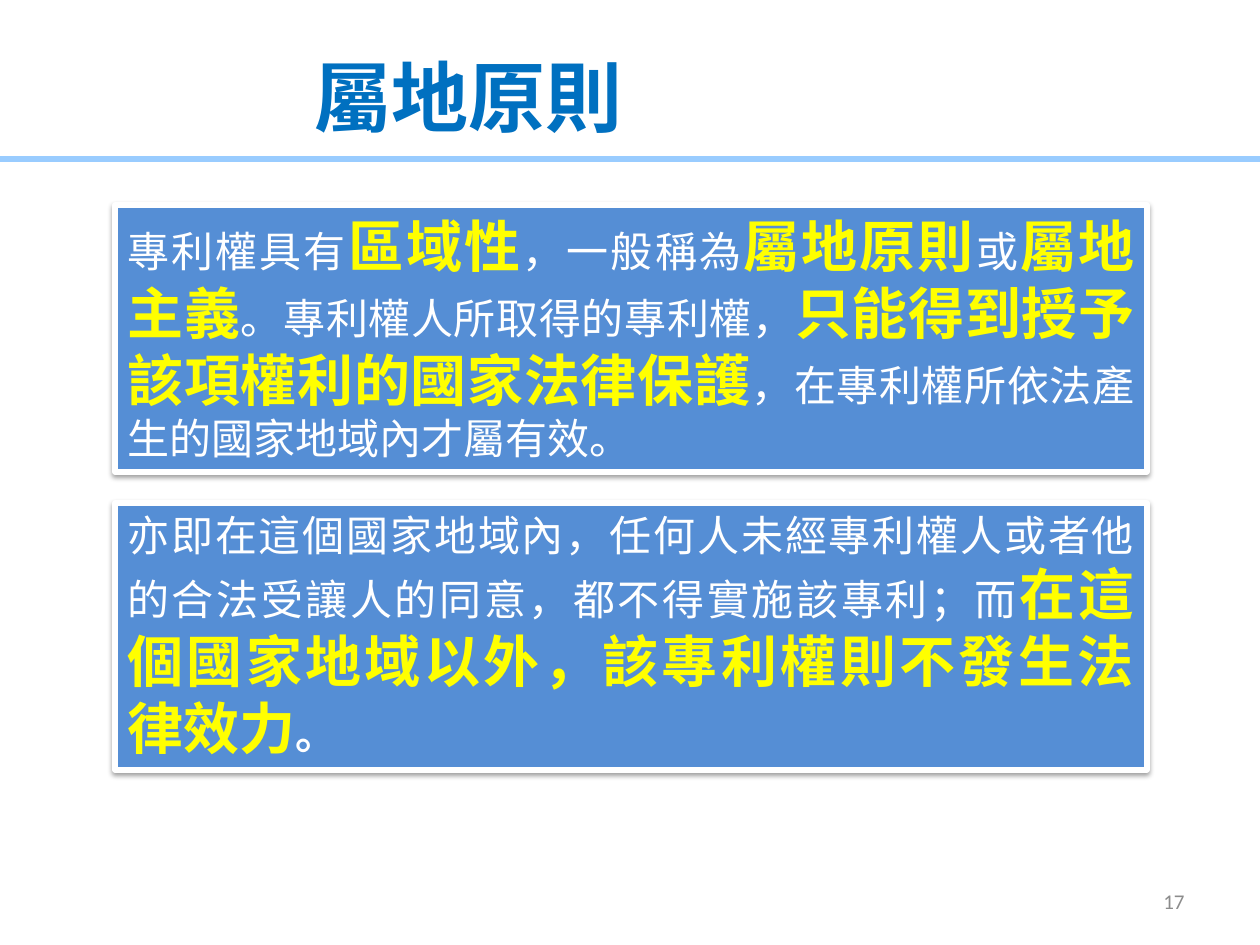
from lxml.etree import SubElement
from pptx import Presentation
from pptx.dml.color import RGBColor
from pptx.enum.shapes import MSO_SHAPE as Shape
from pptx.enum.text import MSO_ANCHOR as Anchor, PP_ALIGN as Align
from pptx.oxml.ns import qn
from pptx.util import Pt

EMU_PER_PX = 914400 / 126
COLORS = {
    "rule": "99CCFF",
    "title": "0070C0",
    "panel": "558ED5",
    "white": "FFFFFF",
    "yellow": "FFFF00",
    "number": "8C8C8C",
    "shadow": "000000",
}
CJK = "Noto Sans CJK SC"
FORMATS = {
    "title": {"size": Pt(44), "bold": True, "name": CJK, "color": "title"},
    "plain": {"size": Pt(24), "bold": False, "name": CJK, "color": "white"},
    "strong": {"size": Pt(32), "bold": True, "name": CJK, "color": "yellow"},
    "stop": {"size": Pt(24), "bold": True, "name": CJK, "color": "white"},
    "number": {"size": Pt(12), "bold": False, "name": "Calibri", "color": "number"},
}


def px(*lengths):
    return [round(length * EMU_PER_PX) for length in lengths]


def add_run(paragraph, text, style):
    run = paragraph.add_run()
    run.text = text
    for key, value in FORMATS[style].items():
        if key == "color":
            run.font.color.rgb = RGBColor.from_string(COLORS[value])
        else:
            setattr(run.font, key, value)
    east_asian = SubElement(run.font._element, qn("a:ea"))
    east_asian.set("typeface", FORMATS[style]["name"])


presentation = Presentation()
presentation.slide_width, presentation.slide_height = px(1260, 945)
slide = presentation.slides.add_slide(presentation.slide_layouts[5])

rule = slide.shapes.add_shape(Shape.RECTANGLE, *px(-5, 156, 1268, 6))
rule.shadow.inherit = False
rule.fill.solid()
rule.fill.fore_color.rgb = RGBColor.from_string(COLORS["rule"])
rule.line.fill.background()

number = slide.shapes.add_textbox(*px(903, 876, 294, 50))
number.text_frame.word_wrap = True
number.text_frame.vertical_anchor = Anchor.MIDDLE
paragraph = number.text_frame.paragraphs[0]
paragraph.alignment = Align.RIGHT
add_run(paragraph, "17", "number")

title = slide.shapes.title
title.left, title.top, title.width, title.height = px(302, 37, 912, 118)
title.text_frame.vertical_anchor = Anchor.MIDDLE
paragraph = title.text_frame.paragraphs[0]
paragraph.alignment = Align.LEFT
add_run(paragraph, "屬地原則", "title")

panels = [
    (503, [
        ("亦即在這個國家地域內，任何人未經專利權人或者他的合法受讓人的同意，都不得實施該專利；而", "plain"),
        ("在這個國家地域以外，該專利權則不發生法律效力", "strong"),
        ("。", "stop"),
    ]),
    (205, [
        ("專利權具有", "plain"),
        ("區域性", "strong"),
        ("，一般稱為", "plain"),
        ("屬地原則", "strong"),
        ("或", "plain"),
        ("屬地主義", "strong"),
        ("。專利權人所取得的專利權，", "plain"),
        ("只能得到授予該項權利的國家法律保護", "strong"),
        ("，在專利權所依法產生的國家地域內才屬有效。", "plain"),
    ]),
]
for top, runs in panels:
    panel = slide.shapes.add_shape(Shape.RECTANGLE, *px(115, top, 1032, 267))
    panel.fill.solid()
    panel.fill.fore_color.rgb = RGBColor.from_string(COLORS["panel"])
    panel.line.color.rgb = RGBColor.from_string(COLORS["white"])
    panel.line.width = Pt(3)
    panel.shadow.inherit = False
    effects = panel._element.spPr.find(qn("a:effectLst"))
    shadow = SubElement(effects, qn("a:outerShdw"), blurRad=str(Pt(3.1)),
                        dist=str(Pt(1.6)), dir="5400000", rotWithShape="0")
    shadow_color = SubElement(shadow, qn("a:srgbClr"), val=COLORS["shadow"])
    SubElement(shadow_color, qn("a:alpha"), val="38000")

    frame = panel.text_frame
    frame.word_wrap = True
    frame.vertical_anchor = Anchor.TOP
    paragraph = frame.paragraphs[0]
    paragraph.alignment = Align.JUSTIFY
    for text, style in runs:
        add_run(paragraph, text, style)

presentation.save("out.pptx")
